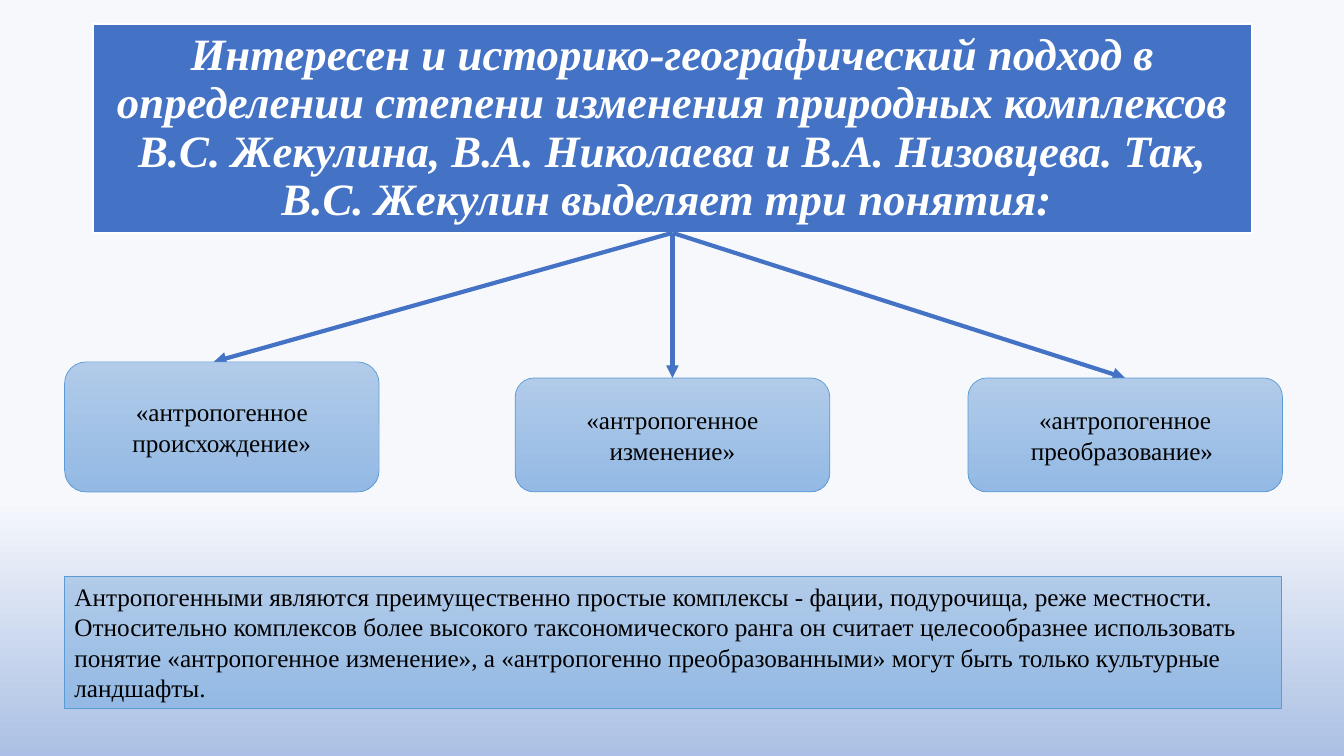
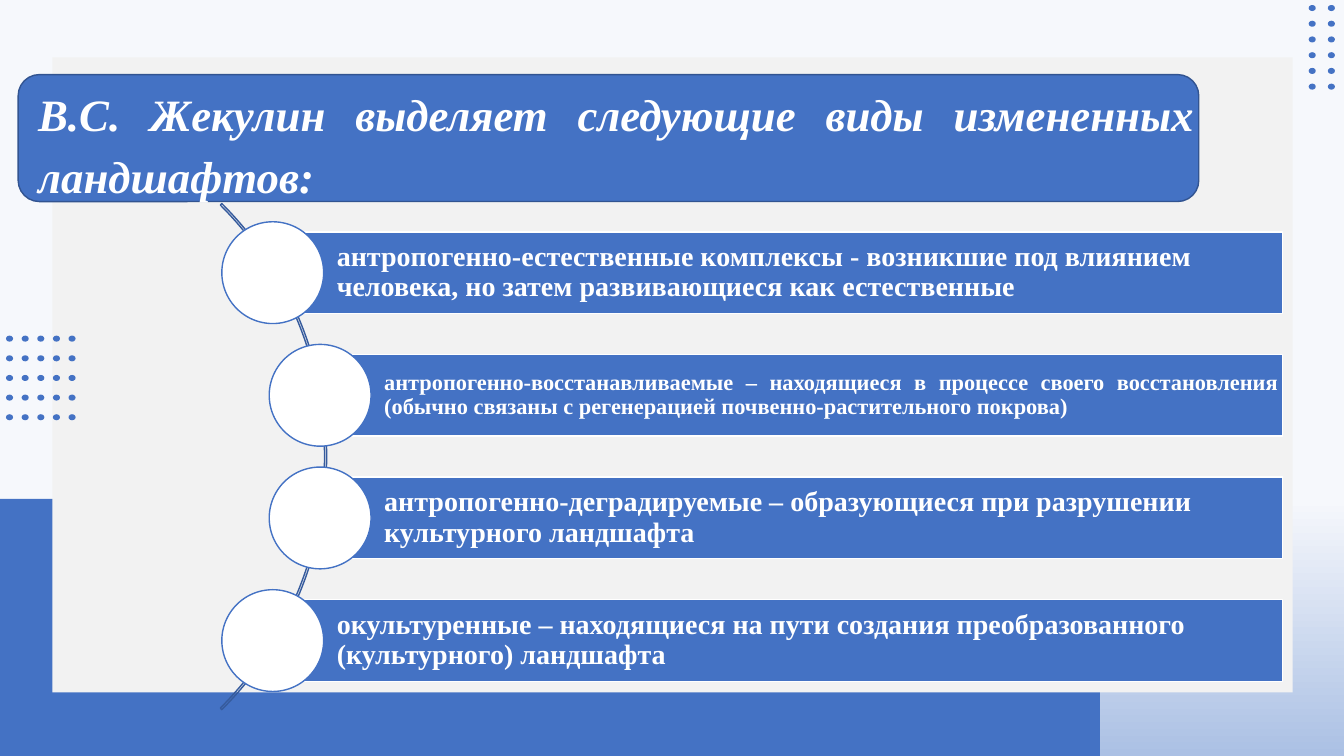
from pptx import Presentation
from pptx.dml.color import RGBColor
from pptx.enum.shapes import MSO_CONNECTOR as Connector, MSO_SHAPE as Shape
from pptx.enum.text import MSO_ANCHOR as Anchor, PP_ALIGN as Align
from pptx.oxml.ns import qn
from pptx.util import Inches, Pt
from lxml.etree import SubElement

FONT = "Times New Roman"
BLUE, WHITE, BLACK, PANEL = "4472C4", "FFFFFF", "000000", "F2F2F2"
TITLE_EDGE, ARC_EDGE, SOFT_EDGE = "325491", "365B9D", "5B9BD5"
BACKGROUND = ((0.66, "F6F8FC"), (1, "ABC0E4"))
SOFT_BLUE = ((0, "B1CBE9"), (1, "93B9E4"))
TITLE_STYLE = dict(size=32, color=WHITE, bold=True, italic=True)

CONCEPTS = [
    ("«антропогенное происхождение»", 0.64, 3.59, 2.12),
    ("«антропогенное изменение»", 5.11, 3.75, 6.67),
    ("«антропогенное преобразование» ", 9.6, 3.75, 11.16),
]
CONCEPT_BOTTOM = 4.88
LANDSCAPES = [
    ("антропогенно-естественные комплексы - возникшие под влиянием человека, "
     "но затем развивающиеся как естественные", 2.7, 20, Align.LEFT, 0.06),
    ("антропогенно-восстанавливаемые – находящиеся в процессе своего восстановления "
     "(обычно связаны с регенерацией почвенно-растительного покрова)",
     3.17, 16, Align.JUSTIFY, 0.04),
    ("антропогенно-деградируемые – образующиеся при разрушении культурного ландшафта",
     3.17, 20, Align.LEFT, 0.06),
    ("окультуренные – находящиеся на пути создания преобразованного "
     "(культурного) ландшафта", 2.7, 20, Align.LEFT, 0.06),
]
BAR_TOPS = (2.3, 5.95)
BAR_RIGHT = 12.72


def rgb(color):
    """Turn a hex string into a colour."""
    return RGBColor.from_string(color)


def paint(fill, paint_value):
    """Apply no fill, a solid colour or a downward gradient."""
    if paint_value is None:
        fill.background()
    elif isinstance(paint_value, str):
        fill.solid()
        fill.fore_color.rgb = rgb(paint_value)
    else:
        fill.gradient()
        fill.gradient_angle = 270
        for stop, (position, color) in zip(fill.gradient_stops, paint_value):
            stop.position = position
            stop.color.rgb = rgb(color)


def add_box(shapes, kind, left, top, width, height, fill, edge=None, edge_width=1):
    """Add a preset shape with its fill and outline."""
    shape = shapes.add_shape(kind, Inches(left), Inches(top), Inches(width), Inches(height))
    shape.shadow.inherit = False
    paint(shape.fill, fill)
    paint(shape.line.fill, edge)
    if edge:
        shape.line.width = Pt(edge_width)
    return shape


def write(shape, text, size, color, bold=False, italic=False, align=Align.LEFT,
          anchor=Anchor.MIDDLE, spacing=1.0, insets=(0.1, 0.05, 0.1, 0.05)):
    """Write one styled paragraph into a shape."""
    frame = shape.text_frame
    frame.word_wrap = True
    frame.vertical_anchor = anchor
    frame.margin_left, frame.margin_top, frame.margin_right, frame.margin_bottom = map(
        Inches, insets)
    paragraph = frame.paragraphs[0]
    paragraph.alignment = align
    paragraph.line_spacing = spacing
    run = paragraph.add_run()
    run.text = text
    font = run.font
    font.name, font.size, font.bold, font.italic = FONT, Pt(size), bold, italic
    font.color.rgb = rgb(color)


def add_arrow(slide, start, end):
    """Draw a blue arrow between two points."""
    connector = slide.shapes.add_connector(Connector.STRAIGHT, *map(Inches, start + end))
    connector.line.color.rgb = rgb(BLUE)
    connector.line.width = Pt(3)
    SubElement(connector.line._get_or_add_ln(), qn("a:tailEnd"), type="triangle")
    SubElement(connector._element.spPr, qn("a:effectLst"))


def spread(first, last, count):
    """Return evenly spaced positions from first to last."""
    return [first + (last - first) * index / (count - 1) for index in range(count)]


def add_dots(slide, columns, rows):
    """Add a grouped grid of small blue dots."""
    group = slide.shapes.add_group_shape()
    for left in columns:
        for top in rows:
            add_box(group.shapes, Shape.OVAL, left, top, 0.07, 0.06, BLUE)


def add_slide(presentation):
    """Add a blank slide with the shared background."""
    slide = presentation.slides.add_slide(presentation.slide_layouts[6])
    paint(slide.background.fill, BACKGROUND)
    return slide


def build_concepts(presentation):
    """Build the slide with three concepts under one heading."""
    slide = add_slide(presentation)
    shapes = slide.shapes
    title = add_box(shapes, Shape.RECTANGLE, 0.92, 0.24, 11.5, 2.07, BLUE, WHITE, 1.5)
    write(title, "Интересен и историко-географический подход в определении степени изменения "
          "природных комплексов B.C. Жекулина, В.А. Николаева и В.А. Низовцева. "
          "Так, B.C. Жекулин выделяет три понятия: ",
          align=Align.CENTER, spacing=0.9, **TITLE_STYLE)
    for text, left, top, arrow_x in CONCEPTS:
        add_arrow(slide, (6.67, 2.31), (arrow_x, top))
        box = add_box(shapes, Shape.ROUNDED_RECTANGLE, left, top, 3.12, CONCEPT_BOTTOM - top,
                      SOFT_BLUE, SOFT_EDGE, 0.5)
        write(box, text, 18, BLACK, align=Align.CENTER)
    summary = add_box(shapes, Shape.RECTANGLE, 0.64, 5.72, 12.07, 1.31,
                      SOFT_BLUE, SOFT_EDGE, 0.5)
    write(summary, "Антропогенными являются преимущественно простые комплексы - фации, "
          "подурочища, реже местности. Относительно комплексов более высокого "
          "таксономического ранга он считает целесообразнее использовать понятие "
          "«антропогенное изменение», а «антропогенно преобразованными» могут быть "
          "только культурные ландшафты.", 18, BLACK, anchor=Anchor.TOP)


def add_landscape(shapes, top, text, left, size, align, inset):
    """Add a text bar with a white circle at its left end."""
    bar = add_box(shapes, Shape.RECTANGLE, left, top, BAR_RIGHT - left, 0.81, BLUE, WHITE)
    write(bar, text, size, WHITE, bold=True, align=align, spacing=0.9,
          insets=(0.64, inset, inset, inset))
    add_box(shapes, Shape.OVAL, left - 0.5, top - 0.1, 1.01, 1.01, WHITE, BLUE)


def build_landscapes(presentation):
    """Build the slide listing the kinds of changed landscapes."""
    slide = add_slide(presentation)
    shapes = slide.shapes
    add_box(shapes, Shape.RECTANGLE, 0, 4.95, 10.91, 2.55, BLUE)
    add_box(shapes, Shape.RECTANGLE, 0.52, 0.57, 12.3, 6.3, PANEL)
    add_dots(slide, spread(12.98, 13.17, 2), spread(0.05, 0.83, 6))
    add_dots(slide, spread(0.06, 0.68, 5), spread(3.33, 4.11, 5))
    add_box(shapes, Shape.ROUNDED_RECTANGLE, 0.18, 0.74, 11.71, 1.26, BLUE, TITLE_EDGE)
    title = shapes.add_textbox(Inches(0.28), Inches(0.73), Inches(11.67), Inches(1.3))
    write(title, "B.C. Жекулин выделяет следующие виды измененных ландшафтов:",
          align=Align.JUSTIFY, anchor=Anchor.TOP, spacing=1.15, **TITLE_STYLE)
    arc = add_box(shapes, Shape.BLOCK_ARC, -3.86, 0.98, 7.1, 7.1, None, ARC_EDGE)
    for index, value in enumerate((189, 27, 0.003)):
        arc.adjustments[index] = value
    for top, landscape in zip(spread(*BAR_TOPS, len(LANDSCAPES)), LANDSCAPES):
        add_landscape(shapes, top, *landscape)


def main():
    """Build and save the presentation."""
    presentation = Presentation()
    presentation.slide_width, presentation.slide_height = Inches(13.33), Inches(7.5)
    build_concepts(presentation)
    build_landscapes(presentation)
    presentation.save("out.pptx")


if __name__ == "__main__":
    main()
